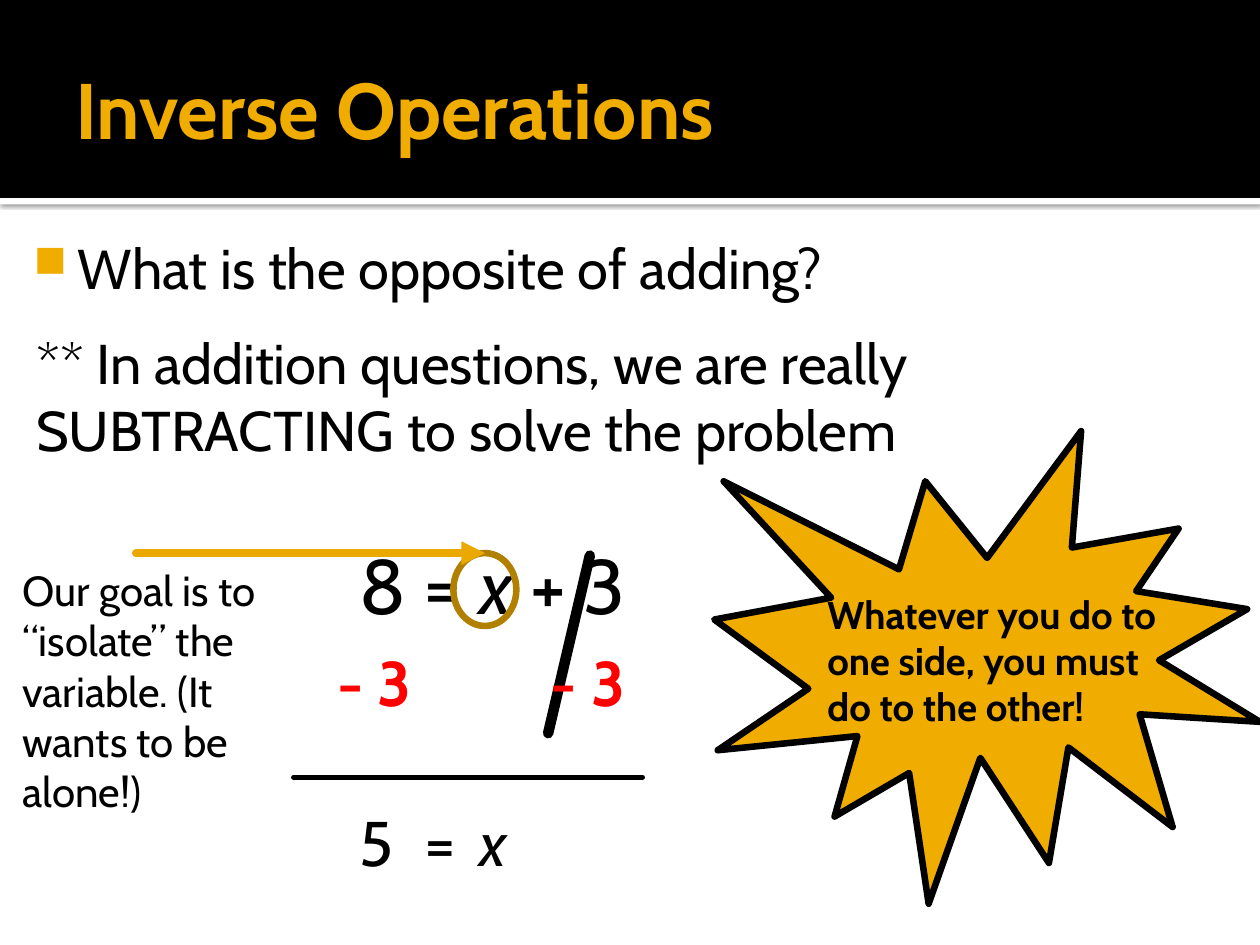
from lxml.etree import SubElement
from pptx import Presentation
from pptx.dml.color import RGBColor
from pptx.enum.shapes import MSO_CONNECTOR, MSO_SHAPE
from pptx.enum.text import MSO_ANCHOR, PP_ALIGN
from pptx.oxml.ns import qn
from pptx.util import Cm, Pt

FONT = "Cabin"
BLACK, WHITE, GOLD, RED = "000000", "FFFFFF", "F0AD00", "FF0000"


def rgb(color):
    return RGBColor.from_string(color)


def add_xml(parent, tag, **attrs):
    return SubElement(parent, qn(tag), {k: str(v) for k, v in attrs.items()})


def style_run(r, size, color=BLACK, bold=False, italic=False):
    f = r.font
    f.name, f.size, f.bold, f.italic = FONT, Pt(size), bold, italic
    f.color.rgb = rgb(color)


def add_text(s, x, y, w, h, parts, size, color=BLACK, bold=False, tabs=()):
    sp = s.shapes.add_textbox(Cm(x), Cm(y), Cm(w), Cm(h))
    tf = sp.text_frame
    tf.word_wrap = True
    p = tf.paragraphs[0]
    for text, italic in parts:
        r = p.add_run()
        r.text = text
        style_run(r, size, color, bold, italic)
    if tabs:
        tab_list = add_xml(p._p.get_or_add_pPr(), "a:tabLst")
        for pos in tabs:
            add_xml(tab_list, "a:tab", pos=Cm(pos), algn="l")
    return sp


def add_shape(s, kind, x, y, w, h, fill=None, line=None, width=3.75):
    sp = s.shapes.add_shape(kind, Cm(x), Cm(y), Cm(w), Cm(h))
    sp.shadow.inherit = False
    if fill:
        sp.fill.solid()
        sp.fill.fore_color.rgb = rgb(fill)
    else:
        sp.fill.background()
    if line:
        sp.line.color.rgb = rgb(line)
        sp.line.width = Pt(width)
    else:
        sp.line.fill.background()
    return sp


def add_line(s, x1, y1, x2, y2, color, width, arrow=False):
    line = s.shapes.add_connector(MSO_CONNECTOR.STRAIGHT, Cm(x1), Cm(y1), Cm(x2), Cm(y2))
    line.line.color.rgb = rgb(color)
    line.line.width = Pt(width)
    ln = line.line._get_or_add_ln()
    ln.set("cap", "rnd")
    add_xml(ln, "a:round")
    if arrow:
        add_xml(ln, "a:tailEnd", type="triangle")
    add_xml(line._element.spPr, "a:effectLst")


def add_header(s, x, y, w, h):
    strip = add_shape(s, MSO_SHAPE.RECTANGLE, x, y + h, w, 0.13, WHITE)
    effects = strip._element.spPr.find(qn("a:effectLst"))
    shadow = add_xml(effects, "a:outerShdw", blurRad=Pt(2.5), dist=Pt(0.8),
                     dir=5400000, algn="t", rotWithShape=0)
    add_xml(add_xml(shadow, "a:srgbClr", val=BLACK), "a:alpha", val=60000)
    band = add_shape(s, MSO_SHAPE.RECTANGLE, x, y, w, h, BLACK)

    title = s.shapes.title
    for sp in (strip, band):
        title._element.addprevious(sp._element)
    title.left, title.top = Cm(x + 1.27), Cm(y + 0.43)
    title.width, title.height = Cm(w - 2.54), Cm(h - 0.51)
    tf = title.text_frame
    tf.text = "Inverse Operations"
    tf.vertical_anchor = MSO_ANCHOR.MIDDLE
    tf.margin_left = Cm(0.25)
    tf.margin_right = tf.margin_top = tf.margin_bottom = Cm(0.13)
    p = tf.paragraphs[0]
    p.alignment = PP_ALIGN.LEFT
    style_run(p.runs[0], 45, GOLD, bold=True)


def add_question(s, x, y, w, h):
    sp = add_text(s, x, y, w, 2.54, [("What is the opposite of adding?", False)], 32)
    tf = sp.text_frame
    tf.margin_left, tf.margin_top = Cm(0.15), Cm(0.25)
    pPr = tf.paragraphs[0]._p.get_or_add_pPr()
    pPr.set("marL", str(Cm(1.22)))
    pPr.set("indent", str(Cm(-0.89)))
    add_xml(add_xml(pPr, "a:buClr"), "a:srgbClr", val=GOLD)
    add_xml(pPr, "a:buSzPct", val=80000)
    add_xml(pPr, "a:buChar", char="■")
    add_text(s, x + 0.28, y + 2.05, w - 0.43, h - 2.05,
             [("** In addition questions, we are really SUBTRACTING to solve the problem", False)], 32)


def add_equation(s, x, y, w, h):
    add_text(s, x + 1.07, y, w, 2.13, [("8 = ", False), ("x ", True), ("+ 3", False)], 44)
    add_line(s, x + 5.97, y + 0.48, x + 5.13, y + 4.06, BLACK, 6)
    add_shape(s, MSO_SHAPE.OVAL, x + 3.22, y + 0.43, 1.27, 1.47, line="B28000")
    add_text(s, x + 0.63, y + 2.13, w, 1.8, [("- 3\t- 3", False)], 36, RED, True, tabs=[4.3])
    add_line(s, x, y + 4.95, x + w, y + 4.95, BLACK, 3)
    add_text(s, x + 1.07, y + h - 1.8, w, 1.8, [("5\t=\t", False), ("x", True)], 36,
             tabs=[1.32, 2.42])


def add_burst(s, x, y, w, h):
    add_shape(s, MSO_SHAPE.EXPLOSION1, x, y, w, h, GOLD, BLACK)
    add_text(s, x + 2.03, y + 3.1, 7.49, 3.07,
             [("Whatever you do to one side, you must do to the other!", False)], 22, bold=True)


def add_goal(s, x, y, w, h):
    add_line(s, x + 2.54, y - 0.1, x + 9.58, y - 0.1, "EBA900", 4.5, arrow=True)
    add_text(s, x, y, w, h,
             [("Our goal is to “isolate” the variable. (It wants to be alone!)", False)], 24)


def main():
    prs = Presentation()
    prs.slide_width, prs.slide_height = Cm(25.4), Cm(19.05)
    s = prs.slides.add_slide(prs.slide_layouts[5])
    add_header(s, 0, 0, 25.4, 3.99)
    add_burst(s, 14.4, 8.69, 11, 9.53)
    add_question(s, 0.2, 4.45, 25.2, 6.42)
    add_equation(s, 5.92, 10.72, 7.03, 7.16)
    add_goal(s, 0.2, 11.25, 5.28, 5.38)
    prs.save("out.pptx")


if __name__ == "__main__":
    main()
